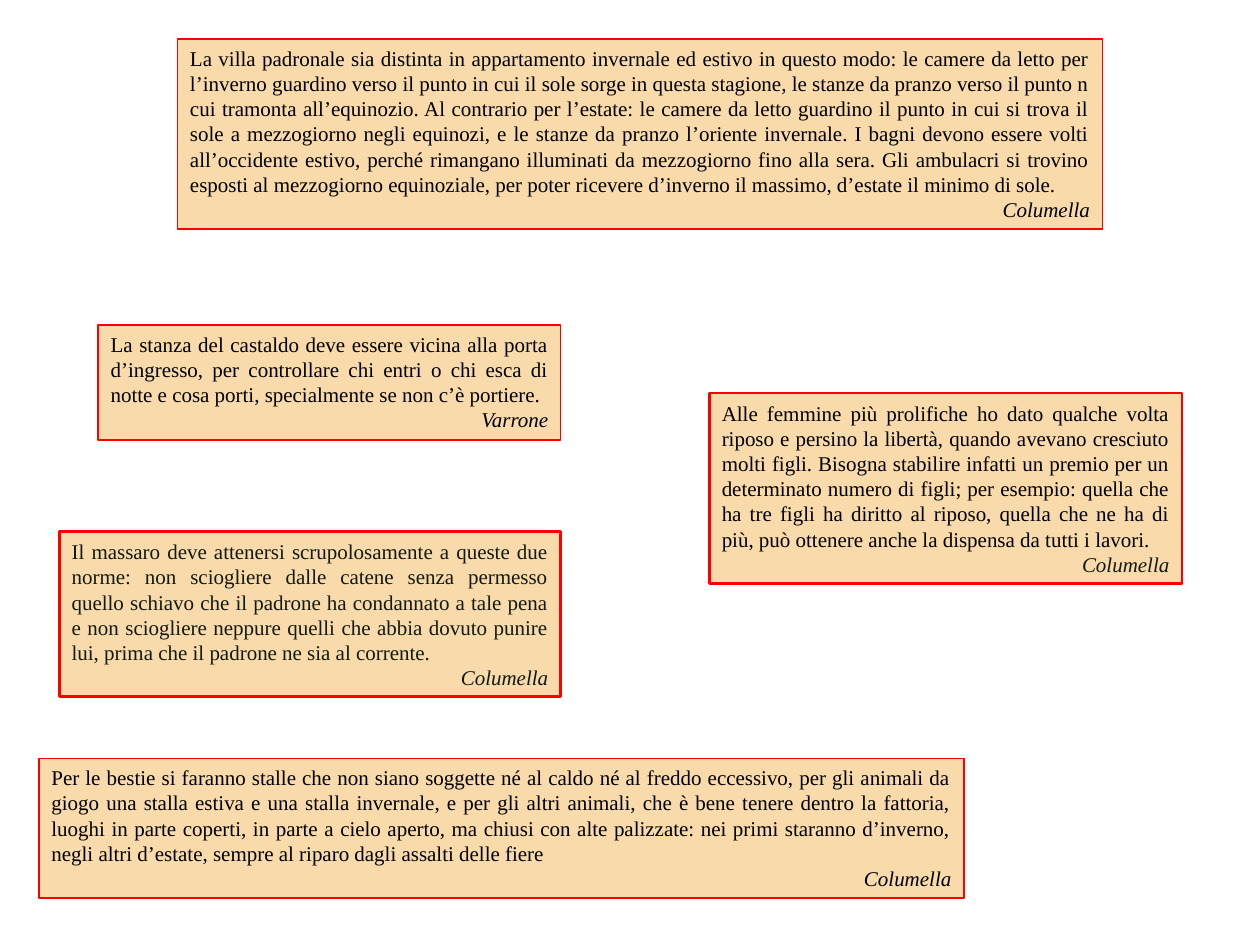
from pptx import Presentation
from pptx.dml.color import RGBColor
from pptx.enum.shapes import MSO_SHAPE
from pptx.enum.text import MSO_ANCHOR, MSO_AUTO_SIZE, PP_ALIGN
from pptx.util import Inches, Pt

SAND = RGBColor(0xF9, 0xDA, 0xAB)
RED = RGBColor(0xFF, 0x00, 0x00)
BLACK = RGBColor(0x00, 0x00, 0x00)
DARK_GREEN = RGBColor(0x11, 0x1A, 0x10)

FONT = "Times New Roman"
TOP, MIDDLE = MSO_ANCHOR.TOP, MSO_ANCHOR.MIDDLE

# Box (left, top, width, height), border, anchor, quote colour, author colour, quote, author
QUOTES = [
    ((1.41, 0.31, 7.34, 1.51), 1, TOP, BLACK, BLACK,
     "La villa padronale sia distinta in appartamento invernale ed estivo in questo modo: "
     "le camere da letto per l’inverno guardino verso il punto in cui il sole sorge in questa "
     "stagione, le stanze da pranzo verso il punto n cui tramonta all’equinozio. Al contrario "
     "per l’estate: le camere da letto guardino il punto in cui si trova il sole a mezzogiorno "
     "negli equinozi, e le stanze da pranzo l’oriente invernale. I bagni devono essere volti "
     "all’occidente estivo, perché rimangano illuminati da mezzogiorno fino alla sera. Gli "
     "ambulacri si trovino esposti al mezzogiorno equinoziale, per poter ricevere d’inverno "
     "il massimo, d’estate il minimo di sole.",
     "Columella"),
    ((0.31, 6.02, 7.34, 1.11), 1, TOP, BLACK, BLACK,
     "Per le bestie si faranno stalle che non siano soggette né al caldo né al freddo "
     "eccessivo, per gli animali da giogo una stalla estiva e una stalla invernale, e per gli "
     "altri animali, che è bene tenere dentro la fattoria, luoghi in parte coperti, in parte a "
     "cielo aperto, ma chiusi con alte palizzate: nei primi staranno d’inverno, negli altri "
     "d’estate, sempre al riparo dagli assalti delle fiere",
     "Columella"),
    ((0.47, 4.22, 3.98, 1.31), 1.5, MIDDLE, DARK_GREEN, DARK_GREEN,
     "Il massaro deve attenersi scrupolosamente a queste due norme: non sciogliere dalle "
     "catene senza permesso quello schiavo che il padrone ha condannato a tale pena e non "
     "sciogliere neppure quelli che abbia dovuto punire lui, prima che il padrone ne sia al "
     "corrente.",
     "Columella"),
    ((5.63, 3.12, 3.75, 1.51), 1.5, MIDDLE, BLACK, DARK_GREEN,
     "Alle femmine più prolifiche ho dato qualche volta riposo e persino la libertà, quando "
     "avevano cresciuto molti figli. Bisogna stabilire infatti un premio per un determinato "
     "numero di figli; per esempio: quella che ha tre figli ha diritto al riposo, quella che "
     "ne ha di più, può ottenere anche la dispensa da tutti i lavori.",
     "Columella"),
    ((0.78, 2.58, 3.67, 0.91), 1, TOP, BLACK, BLACK,
     "La stanza del castaldo deve essere vicina alla porta d’ingresso, per controllare chi "
     "entri o chi esca di notte e cosa porti, specialmente se non c’è portiere.",
     "Varrone"),
]


def write_paragraph(paragraph, text, align, color, italic=False):
    paragraph.alignment = align
    run = paragraph.add_run()
    run.text = text
    run.font.name = FONT
    run.font.size = Pt(12)
    run.font.italic = italic
    run.font.color.rgb = color


def add_quote(slide, box, border, anchor, quote_color, author_color, quote, author):
    panel = slide.shapes.add_shape(MSO_SHAPE.RECTANGLE, *map(Inches, box))
    panel.shadow.inherit = False
    panel.fill.solid()
    panel.fill.fore_color.rgb = SAND
    panel.line.color.rgb = RED
    panel.line.width = Pt(border)

    frame = panel.text_frame
    frame.word_wrap = True
    frame.auto_size = MSO_AUTO_SIZE.SHAPE_TO_FIT_TEXT
    frame.vertical_anchor = anchor

    # Justified quote, then its author at the right
    write_paragraph(frame.paragraphs[0], quote, PP_ALIGN.JUSTIFY, quote_color)
    write_paragraph(frame.add_paragraph(), author, PP_ALIGN.RIGHT, author_color, italic=True)


def main():
    deck = Presentation()
    deck.slide_width = Inches(10)
    deck.slide_height = Inches(7.5)
    slide = deck.slides.add_slide(deck.slide_layouts[6])
    for quote in QUOTES:
        add_quote(slide, *quote)
    deck.save("out.pptx")


if __name__ == "__main__":
    main()
